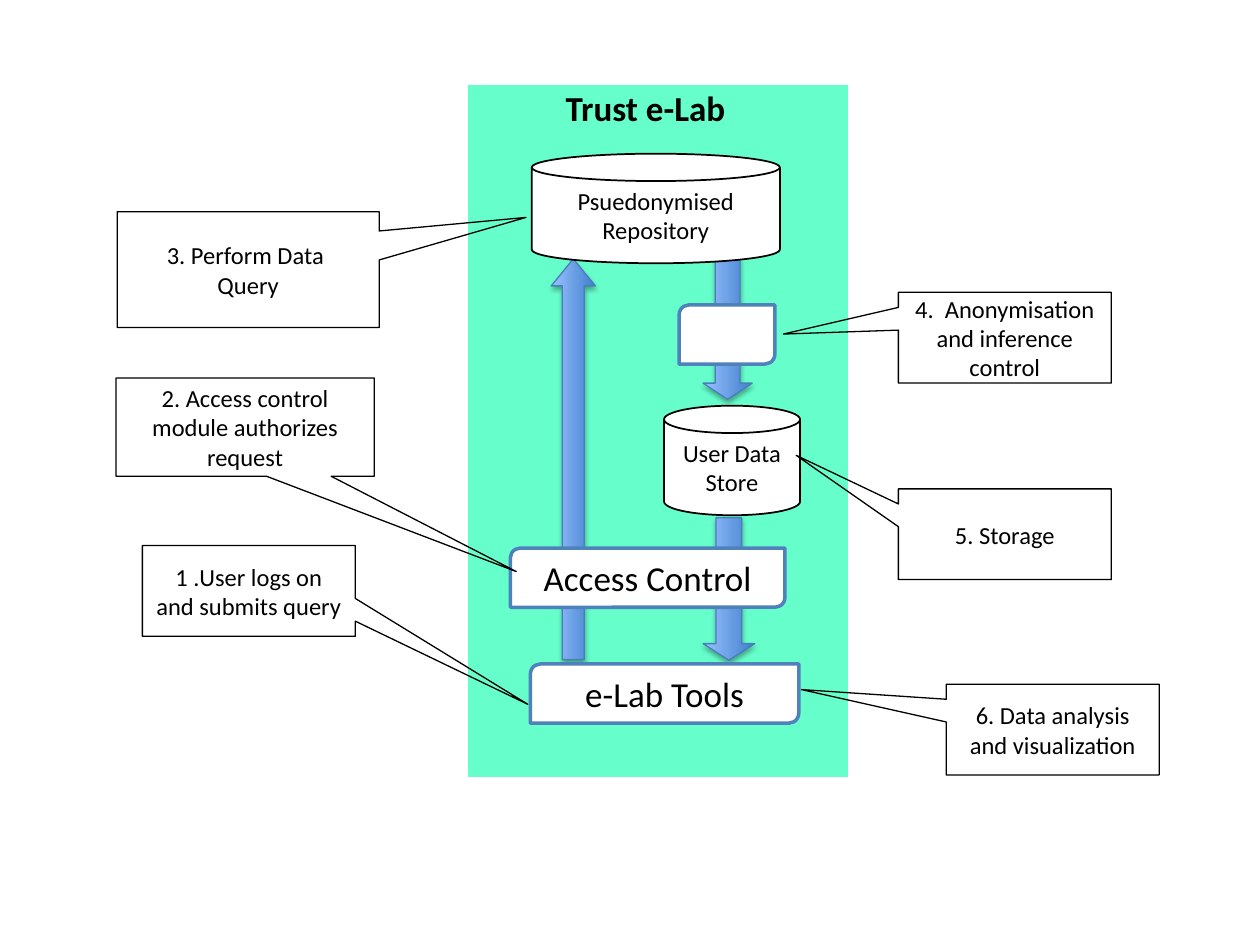
from lxml.etree import SubElement
from pptx import Presentation
from pptx.dml.color import RGBColor
from pptx.enum.shapes import MSO_SHAPE as Shape
from pptx.enum.text import MSO_ANCHOR as Anchor, PP_ALIGN as Align
from pptx.oxml.ns import qn
from pptx.util import Inches, Pt

BLACK = "000000"
WHITE = "FFFFFF"
MINT = "66FFCC"
MODULE_BLUE = "4F81BD"
ARROW_BLUE = "4A7EBB"
ARROW_GRADIENT = ("9BC1FF", "3F80CD")


def paint(color_format, color):
    color_format.rgb = RGBColor.from_string(color)


def write_text(shape, text, size, bold=False, align=Align.CENTER):
    shape.text_frame.text = text
    for paragraph in shape.text_frame.paragraphs:
        paragraph.alignment = align
        for run in paragraph.runs:
            run.font.name = "Calibri"
            run.font.size = Pt(size)
            run.font.bold = bold
            paint(run.font.color, BLACK)


def add_box(shapes, kind, box, fill, line, width, text="", size=14):
    shape = shapes.add_shape(kind, *map(Inches, box))
    shape.shadow.inherit = False
    if fill:
        shape.fill.solid()
        paint(shape.fill.fore_color, fill)
    else:
        shape.fill.background()
    paint(shape.line.color, line)
    shape.line.width = Pt(width)
    shape.text_frame.word_wrap = True
    shape.text_frame.vertical_anchor = Anchor.MIDDLE
    if text:
        write_text(shape, text, size)
    return shape


def add_store(shapes, box, text):
    add_box(shapes, Shape.CAN, box, WHITE, BLACK, 1, text)


def add_module(shapes, box, text=""):
    add_box(shapes, Shape.ROUND_2_DIAG_RECTANGLE, box, WHITE, MODULE_BLUE, 2, text, 20)


def add_callout(shapes, box, tip, text):
    shape = add_box(shapes, Shape.RECTANGULAR_CALLOUT, box, None, BLACK, 0.75, text)
    shape.adjustments[0], shape.adjustments[1] = tip


def add_shadow(shape):
    effects = shape.element.spPr.find(qn("a:effectLst"))
    shadow = SubElement(effects, qn("a:outerShdw"), blurRad=str(Pt(3.1)),
                        dist=str(Pt(1.8)), dir="5400000", rotWithShape="0")
    color = SubElement(shadow, qn("a:srgbClr"), val=BLACK)
    SubElement(color, qn("a:alpha"), val="35000")


def add_flow_arrow(shapes, box, rotation, head):
    shape = add_box(shapes, Shape.RIGHT_ARROW, box, None, ARROW_BLUE, 0.75)
    shape.rotation = rotation
    if rotation == 90:
        shape.element.spPr.xfrm.set("flipV", "1")
    shape.adjustments[1] = head
    shape.fill.gradient()
    shape.fill.gradient_angle = 270
    for stop, color in zip(shape.fill.gradient_stops, ARROW_GRADIENT):
        paint(stop.color, color)
    add_shadow(shape)


def add_heading(shapes, box, text):
    heading = shapes.add_textbox(*map(Inches, box))
    heading.text_frame.word_wrap = False
    write_text(heading, text, 20, bold=True, align=Align.LEFT)


def main():
    presentation = Presentation()
    presentation.slide_width = Inches(10)
    presentation.slide_height = Inches(7.5)
    slide = presentation.slides.add_slide(presentation.slide_layouts[6])
    shapes = slide.shapes.add_group_shape().shapes

    add_box(shapes, Shape.RECTANGLE, (3.71, 0.67, 3.03, 5.5), MINT, WHITE, 0.75)

    add_flow_arrow(shapes, (5.21, 2.41, 1.13, 0.39), 90, 0.33)
    add_module(shapes, (5.39, 2.42, 0.76, 0.47))
    add_flow_arrow(shapes, (5.22, 4.47, 1.13, 0.41), 90, 0.32)
    add_store(shapes, (5.27, 3.22, 1.08, 0.87), "User Data\nStore")

    right_callouts = [
        (7.13, 2.32, (-1.04, -0.04), "4.  Anonymisation and inference control"),
        (7.13, 3.88, (-0.98, -0.87), "5. Storage"),
        (7.51, 5.43, (-1.18, -0.44), "6. Data analysis and visualization"),
    ]
    for left, top, tip, text in right_callouts:
        add_callout(shapes, (left, top, 1.69, 0.72), tip, text)

    add_flow_arrow(shapes, (2.96, 3.47, 3.18, 0.35), 270, 0.61)
    add_module(shapes, (4.05, 4.35, 2.18, 0.47), "Access Control")
    add_module(shapes, (4.21, 5.27, 2.13, 0.47), "e-Lab Tools")

    left_callouts = [
        ((1.13, 4.33, 1.69, 0.72), (1.31, 1.25), "1 .User logs on and submits query"),
        ((0.92, 3, 2.05, 0.78), (1.05, 1.47), "2. Access control module authorizes request"),
        ((0.93, 1.68, 2.08, 0.92), (1.06, -0.45), "3. Perform Data \nQuery"),
    ]
    for box, tip, text in left_callouts:
        add_callout(shapes, box, tip, text)

    add_store(shapes, (4.22, 1.22, 1.97, 0.87), "Psuedonymised\nRepository")
    add_heading(shapes, (4.39, 0.64, 1.48, 0.43), "Trust e-Lab")

    presentation.save("out.pptx")


if __name__ == "__main__":
    main()
